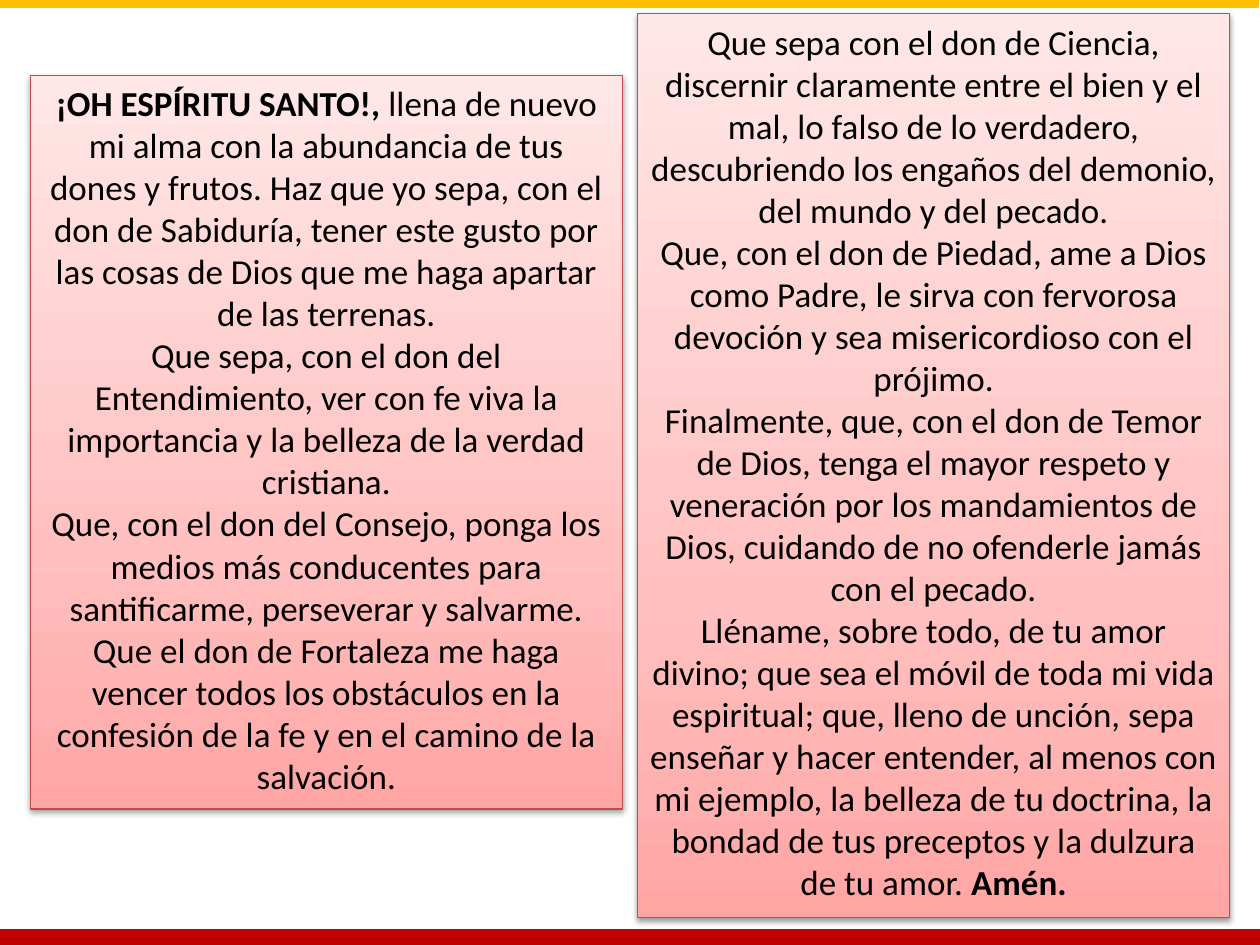
from lxml import etree
from pptx import Presentation
from pptx.dml.color import RGBColor
from pptx.enum.shapes import MSO_SHAPE
from pptx.enum.text import MSO_ANCHOR, MSO_AUTO_SIZE, PP_ALIGN
from pptx.oxml import parse_xml
from pptx.oxml.ns import qn
from pptx.util import Inches, Pt

RECTANGLE = MSO_SHAPE.RECTANGLE
CENTER = PP_ALIGN.CENTER
TOP = MSO_ANCHOR.TOP
GROW = MSO_AUTO_SIZE.SHAPE_TO_FIT_TEXT

GOLD = RGBColor(0xFF, 0xC0, 0x00)
RED = RGBColor(0xC0, 0x00, 0x00)
BORDER = RGBColor(0xBF, 0x4C, 0x48)
BLACK = RGBColor(0x00, 0x00, 0x00)
PINK_STOPS = [
    (0, RGBColor(0xFF, 0xA6, 0xA5)),
    (35, RGBColor(0xFF, 0xC0, 0xBF)),
    (100, RGBColor(0xFF, 0xE7, 0xE7)),
]
DRAWING_NS = "http://schemas.openxmlformats.org/drawingml/2006/main"


def add_text(paragraph, text, size=20, font="Calibri", color=BLACK, bold=False):
    run = paragraph.add_run()
    run.text = text
    run.font.size = Pt(size)
    run.font.name = font
    run.font.color.rgb = color
    run.font.bold = bold


def add_box(left, top, width, height, line_color, line_width):
    box = slide.shapes.add_shape(
        RECTANGLE, Inches(left), Inches(top), Inches(width), Inches(height))
    box.shadow.inherit = False
    box.line.color.rgb = line_color
    box.line.width = Pt(line_width)
    return box


prs = Presentation()
prs.slide_width = Inches(10)
prs.slide_height = Inches(7.5)
slide = prs.slides.add_slide(prs.slide_layouts[6])

# Edge bands
for left, top, height, color in [(-0.02, 0, 0.05, GOLD), (0, 7.39, 0.11, RED)]:
    band = add_box(left, top, 10, height, color, 2)
    band.fill.solid()
    band.fill.fore_color.rgb = color

# Prayer text: each paragraph is a list of (text, bold) pieces
first_half = [
    [("¡OH ESPÍRITU SANTO!, ", True),
     ("llena de nuevo mi alma con la abundancia de tus dones y frutos. Haz que "
      "yo sepa, con el don de Sabiduría, tener este gusto por las cosas de Dios "
      "que me haga apartar de las terrenas.", False)],
    [("Que sepa, con el don del Entendimiento, ver con fe viva la importancia y "
      "la belleza de la verdad cristiana.", False)],
    [("Que, con el don del Consejo, ponga los medios más conducentes para "
      "santificarme, perseverar y salvarme.", False)],
    [("Que el don de Fortaleza me haga vencer todos los obstáculos en la "
      "confesión de la fe y en el camino de la salvación.", False)],
]
second_half = [
    [("Que sepa con el don de Ciencia, discernir claramente entre el bien y el "
      "mal, lo falso de lo verdadero, descubriendo los engaños del demonio, del "
      "mundo y del pecado.", False)],
    [("Que, con el don de Piedad, ame a Dios como Padre, le sirva con fervorosa "
      "devoción y sea misericordioso con el prójimo.", False)],
    [("Finalmente, que, con el don de Temor de Dios, tenga el mayor respeto y "
      "veneración por los mandamientos de Dios, cuidando de no ofenderle jamás "
      "con el pecado.", False)],
    [("Lléname, sobre todo, de tu amor divino; que sea el móvil de toda mi vida "
      "espiritual; que, lleno de unción, sepa enseñar y hacer entender, al menos "
      "con mi ejemplo, la belleza de tu doctrina, la bondad de tus preceptos y "
      "la dulzura de tu amor. ", False),
     ("Amén.", True)],
]

# Prayer panels
gradient_stops = "".join(
    f'<a:gs pos="{position * 1000}"><a:srgbClr val="{color}"/></a:gs>'
    for position, color in PINK_STOPS)
for left, top, height, prayer in [(0.24, 0.6, 5.82, first_half),
                                  (5.06, 0.11, 7.17, second_half)]:
    panel = add_box(left, top, 4.7, height, BORDER, 0.75)

    # Three-stop gradient, darkest at the bottom
    properties = panel.element.spPr
    gradient = parse_xml(
        f'<a:gradFill xmlns:a="{DRAWING_NS}" rotWithShape="1">'
        f'<a:gsLst>{gradient_stops}</a:gsLst>'
        '<a:lin ang="16200000" scaled="0"/></a:gradFill>')
    properties.find(qn("a:prstGeom")).addnext(gradient)

    # Soft shadow below
    shadow = etree.SubElement(
        properties.find(qn("a:effectLst")), qn("a:outerShdw"),
        blurRad="40000", dist="20000", dir="5400000", rotWithShape="0")
    shadow_color = etree.SubElement(shadow, qn("a:srgbClr"), val=str(BLACK))
    etree.SubElement(shadow_color, qn("a:alpha"), val="38000")

    frame = panel.text_frame
    frame.word_wrap = True
    frame.auto_size = GROW
    frame.vertical_anchor = TOP
    for index, pieces in enumerate(prayer):
        paragraph = frame.add_paragraph() if index else frame.paragraphs[0]
        paragraph.alignment = CENTER
        for text, bold in pieces:
            add_text(paragraph, text, bold=bold)

prs.save("out.pptx")
